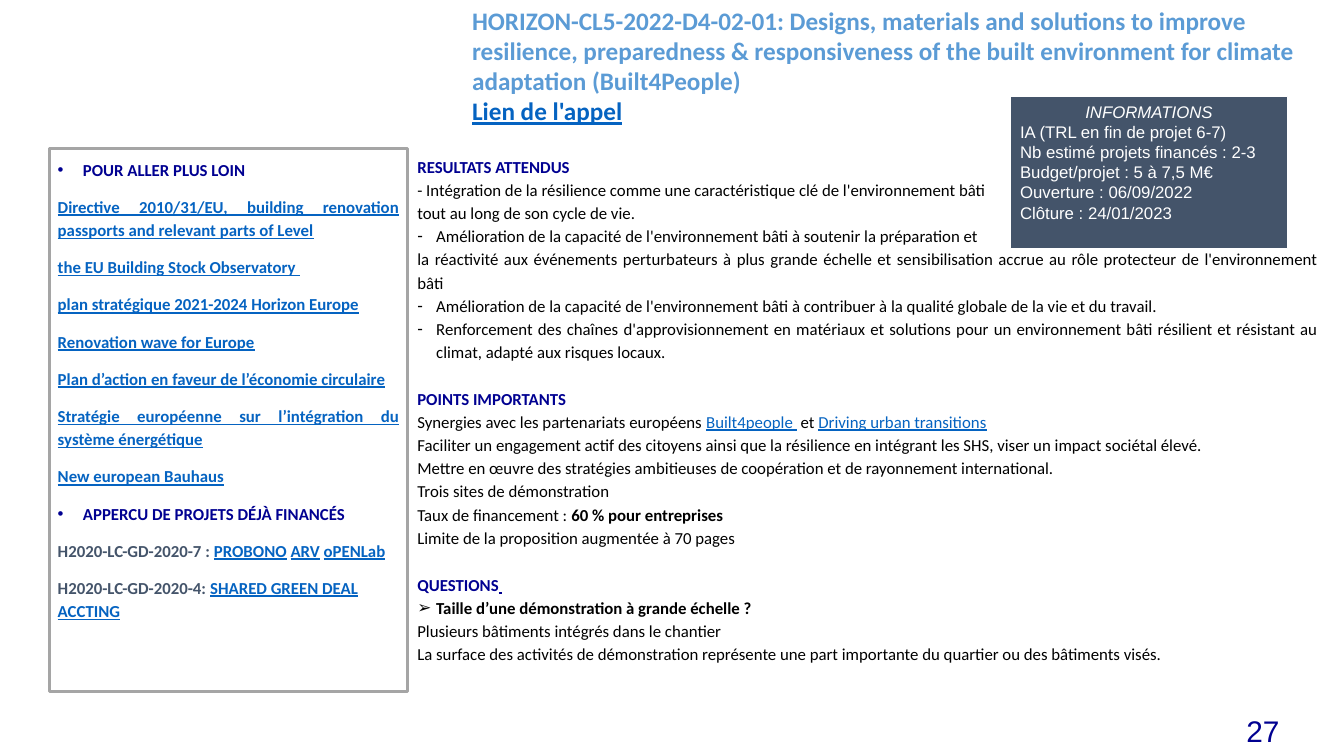
from lxml import etree
from pptx import Presentation
from pptx import util as u
from pptx.dml.color import RGBColor
from pptx.enum import shapes, text
from pptx.oxml.ns import qn

NAVY = RGBColor(0x00, 0x00, 0x91)
LINK_BLUE = RGBColor(0x05, 0x63, 0xC1)
TITLE_BLUE = RGBColor(0x5B, 0x9B, 0xD5)
SLATE = RGBColor(0x44, 0x54, 0x6A)
GREY = RGBColor(0xA5, 0xA5, 0xA5)
BLACK = RGBColor(0, 0, 0)
WHITE = RGBColor(0xFF, 0xFF, 0xFF)

# Style name: colour, bold, italic, underline
STYLES = {
    "title": (TITLE_BLUE, True, False, False),
    "heading": (NAVY, True, False, False),
    "heading line": (NAVY, True, False, True),
    "link": (LINK_BLUE, True, False, True),
    "light link": (LINK_BLUE, False, False, True),
    "plain": (BLACK, False, False, False),
    "strong": (BLACK, True, False, False),
    "project": (SLATE, True, False, False),
    "info": (WHITE, False, False, False),
    "info title": (WHITE, False, True, False),
    "number": (NAVY, False, False, False),
}

LEFT = text.PP_ALIGN.LEFT
CENTER = text.PP_ALIGN.CENTER
RIGHT = text.PP_ALIGN.RIGHT
JUSTIFY = text.PP_ALIGN.JUSTIFY

SECTION_GAP = {"before": 16.8}
DASH = {"bullet": "-", "indent": 13.5}
ARROW = {"bullet": "➢", "indent": 13.5, "align": LEFT}
DOT = {"bullet": "•", "indent": 18}

# Each paragraph: its spans as (text, style), then its own format
TITLE = [
    ([("HORIZON-CL5-2022-D4-02-01: Designs, materials and solutions to improve "
       "resilience, preparedness & responsiveness of the built environment for "
       "climate adaptation (Built4People)", "title")], {}),
    ([("Lien de l'appel", "link")], {}),
]

READING = [
    ([("POUR ALLER PLUS LOIN", "heading")], DOT),
    *[([(source, "link")], {}) for source in (
        "Directive 2010/31/EU, building renovation passports and relevant parts of Level",
        "the EU Building Stock Observatory ",
        "plan stratégique 2021-2024 Horizon Europe",
        "Renovation wave for Europe",
        "Plan d’action en faveur de l’économie circulaire",
        "Stratégie européenne sur l’intégration du système énergétique",
        "New european Bauhaus",
    )],
    ([("APPERCU DE PROJETS DÉJÀ FINANCÉS", "heading")], {**DOT, "align": LEFT}),
    ([("H2020-LC-GD-2020-7 : ", "project"), ("PROBONO", "link"), (" ", "project"),
      ("ARV", "link"), (" ", "project"), ("oPENLab", "link")], {"align": LEFT}),
    ([("H2020-LC-GD-2020-4: ", "project"), ("SHARED GREEN DEAL", "link"),
      (" ", "project"), ("ACCTING", "link")], {"align": LEFT}),
]

DETAILS = [
    ([("RESULTATS ATTENDUS", "heading")], {}),
    ([("- Intégration de la résilience comme une caractéristique clé de "
       "l'environnement bâti", "plain")], {}),
    ([("tout au long de son cycle de vie.", "plain")], {}),
    ([("Amélioration de la capacité de l'environnement bâti à soutenir la "
       "préparation et", "plain")], DASH),
    ([("la réactivité aux événements perturbateurs à plus grande échelle et "
       "sensibilisation accrue au rôle protecteur de l'environnement bâti", "plain")], {}),
    ([("Amélioration de la capacité de l'environnement bâti à contribuer à la "
       "qualité globale de la vie et du travail.", "plain")], DASH),
    ([("Renforcement des chaînes d'approvisionnement en matériaux et solutions "
       "pour un environnement bâti résilient et résistant au climat, adapté aux "
       "risques locaux.", "plain")], DASH),
    ([("POINTS IMPORTANTS", "heading")], SECTION_GAP),
    ([("Synergies avec les partenariats européens ", "plain"),
      ("Built4people ", "light link"), (" et ", "plain"),
      ("Driving urban transitions", "light link")], {}),
    ([("Faciliter un engagement actif des citoyens ainsi que la résilience en "
       "intégrant les SHS, viser un impact sociétal élevé.", "plain")], {}),
    ([("Mettre en œuvre des stratégies ambitieuses de coopération et de "
       "rayonnement international.", "plain")], {}),
    ([("Trois sites de démonstration", "plain")], {}),
    ([("Taux de financement : ", "plain"), ("60 % pour entreprises", "strong")], {}),
    ([("Limite de la proposition augmentée à 70 pages", "plain")], {}),
    ([("QUESTIONS", "heading"), (" ", "heading line")], SECTION_GAP),
    ([("Taille d’une démonstration à grande échelle ?", "strong")], ARROW),
    ([("Plusieurs bâtiments intégrés dans le chantier", "plain")], {}),
    ([("La surface des activités de démonstration représente une part importante "
       "du quartier ou des bâtiments visés.", "plain")], {}),
]

INFORMATIONS = [
    ([("INFORMATIONS", "info title")], {"align": CENTER}),
    *[([(fact, "info")], {}) for fact in (
        "IA (TRL en fin de projet 6-7)",
        "Nb estimé projets financés : 2-3",
        "Budget/projet : 5 à 7,5 M€",
        "Ouverture : 06/09/2022",
        "Clôture : 24/01/2023",
    )],
]

PAGE_NUMBER = [([("27", "number")], {})]


def place(box, left, top, width, height):
    box.left, box.top, box.width, box.height = map(u.Pt, (left, top, width, height))


def set_bullet(para, bullet, indent):
    props = para._p.get_or_add_pPr()
    props.set("marL", str(u.Pt(indent)))
    props.set("indent", str(u.Pt(-indent)))
    if bullet:
        etree.SubElement(props, qn("a:buFont")).set("typeface", "Arial")
        etree.SubElement(props, qn("a:buChar")).set("char", bullet)
    else:
        etree.SubElement(props, qn("a:buNone"))


def write(box, lines, font="Calibri", size=12, align=LEFT, spacing=1.0, before=0,
          anchor=text.MSO_ANCHOR.TOP, margins=(7.2, 3.6)):
    """Fill a box with paragraphs; a paragraph's own format overrides the box's."""
    frame = box.text_frame
    frame.word_wrap = True
    frame.auto_size = text.MSO_AUTO_SIZE.NONE
    frame.vertical_anchor = anchor
    frame.margin_left = frame.margin_right = u.Pt(margins[0])
    frame.margin_top = frame.margin_bottom = u.Pt(margins[1])
    for index, (spans, own) in enumerate(lines):
        para = frame.add_paragraph() if index else frame.paragraphs[0]
        set_bullet(para, own.get("bullet"), own.get("indent", 0))
        para.alignment = own.get("align", align)
        para.line_spacing = spacing
        para.space_before = u.Pt(own.get("before", before) if index else 0)
        para.space_after = u.Pt(0)
        for words, style in spans:
            span = para.add_run()
            span.text = words
            span.font.name, span.font.size = font, u.Pt(size)
            colour, span.font.bold, span.font.italic, span.font.underline = STYLES[style]
            span.font.color.rgb = colour


def main():
    deck = Presentation()
    deck.slide_width, deck.slide_height = u.Pt(960), u.Pt(540)
    page = deck.slides.add_slide(deck.slide_layouts[1])
    title, reading = page.placeholders

    place(title, 330, 0, 605.5, 94.5)
    write(title, TITLE, size=18)

    place(reading, 35.5, 106, 255.5, 388)
    reading.line.color.rgb = GREY
    reading.line.width = u.Pt(2)
    write(reading, READING, align=JUSTIFY, spacing=1.15, before=10, margins=(5.76, 5.76))

    details = page.shapes.add_textbox(u.Pt(291), u.Pt(106), u.Pt(658), u.Pt(375))
    write(details, DETAILS, align=JUSTIFY, spacing=1.15)

    facts = page.shapes.add_shape(shapes.MSO_SHAPE.RECTANGLE, u.Pt(721.5), u.Pt(69),
                                  u.Pt(198.5), u.Pt(108.5))
    facts.shadow.inherit = False
    facts.fill.solid()
    facts.fill.fore_color.rgb = SLATE
    facts.line.color.rgb = WHITE
    facts.line.width = u.Pt(0.75)
    write(facts, INFORMATIONS, font="Arial")

    number = page.shapes.add_textbox(u.Pt(798), u.Pt(504), u.Pt(123), u.Pt(36))
    write(number, PAGE_NUMBER, font="Arial", size=21.3, align=RIGHT,
          anchor=text.MSO_ANCHOR.MIDDLE)

    deck.save("out.pptx")


if __name__ == "__main__":
    main()
